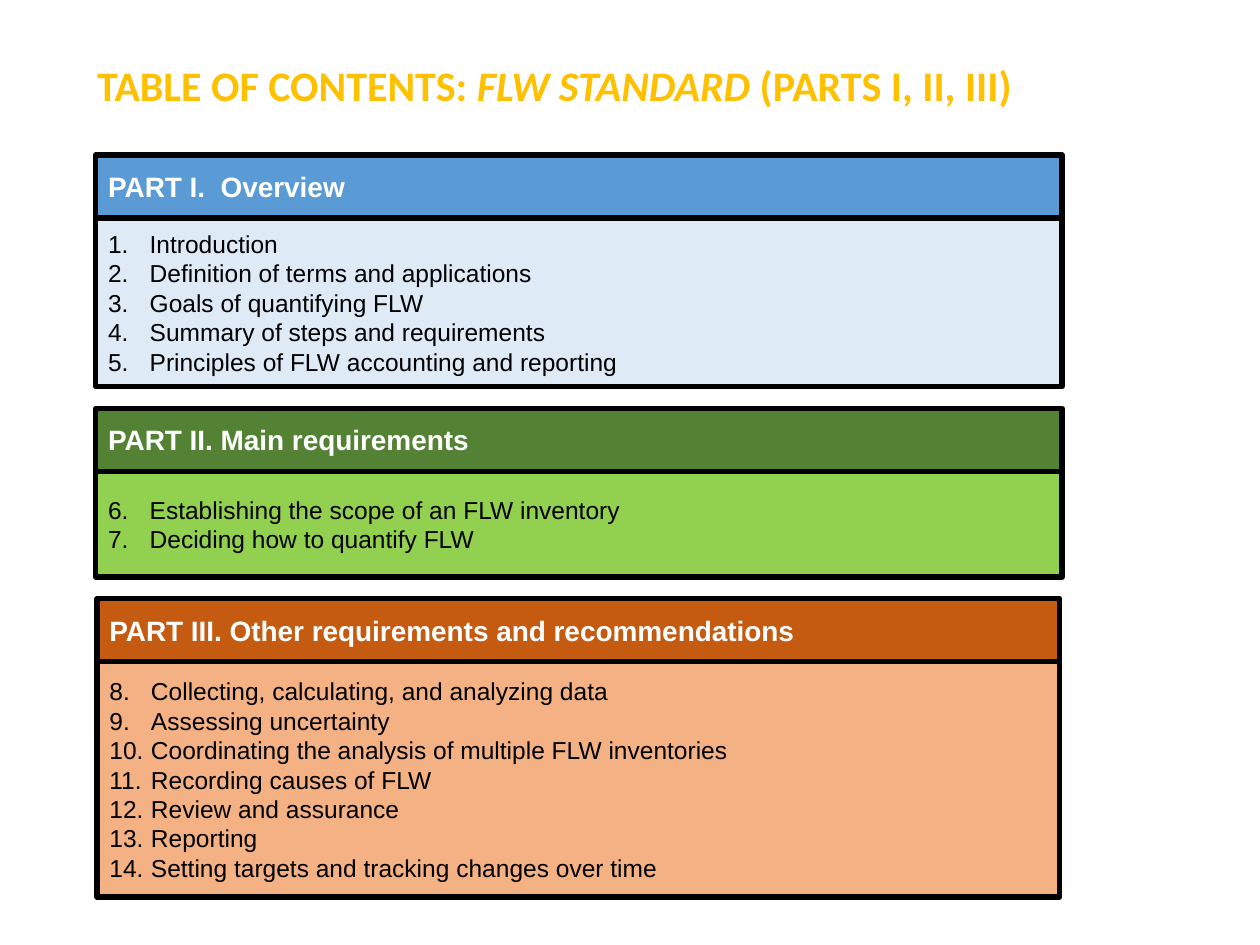
from lxml import etree
from pptx import Presentation
from pptx.dml.color import RGBColor
from pptx.enum import shapes, text
from pptx.oxml import ns
from pptx.util import Inches, Pt

BLACK = RGBColor(0x00, 0x00, 0x00)
WHITE = RGBColor(0xFF, 0xFF, 0xFF)
GOLD = RGBColor(0xFF, 0xC0, 0x00)
BLUE = RGBColor(0x5B, 0x9B, 0xD5)
GREEN = RGBColor(0x54, 0x82, 0x35)
LIME = RGBColor(0x92, 0xD0, 0x50)
RUST = RGBColor(0xC5, 0x5A, 0x11)
PEACH = RGBColor(0xF4, 0xB1, 0x83)

HEAD = 0.5  # height of a part's heading bar
HANG = 0.33  # hanging indent of the chapter numbers

# Box, heading, heading colour, body colour, body opacity, first number, chapters
PARTS = [
    ((0.76, 1.23, 7.67, 1.84), "PART I.  Overview", BLUE, BLUE, 20, 1,
     ["Introduction",
      "Definition of terms and applications",
      "Goals of quantifying FLW",
      "Summary of steps and requirements",
      "Principles of FLW accounting and reporting"]),
    ((0.76, 3.24, 7.67, 1.34), "PART II. Main requirements", GREEN, LIME, 100, 6,
     ["Establishing the scope of an FLW inventory",
      "Deciding how to quantify FLW"]),
    ((0.77, 4.75, 7.64, 2.37), "PART III. Other requirements and recommendations",
     RUST, PEACH, 100, 8,
     ["Collecting, calculating, and analyzing data",
      "Assessing uncertainty",
      "Coordinating the analysis of multiple FLW inventories",
      "Recording causes of FLW",
      "Review and assurance",
      "Reporting",
      "Setting targets and tracking changes over time"]),
]


def write(shape, lines, size, color, font="Arial", bold=False, hang=0, space=1.0):
    """Fill a shape with lines; each line is a list of (words, italic) runs."""
    frame = shape.text_frame
    frame.word_wrap = True
    frame.auto_size = text.MSO_AUTO_SIZE.NONE
    frame.vertical_anchor = text.MSO_ANCHOR.MIDDLE
    for i, line in enumerate(lines):
        para = frame.add_paragraph() if i else frame.paragraphs[0]
        para.alignment = text.PP_ALIGN.LEFT
        para.line_spacing = space
        if hang:
            props = para._p.get_or_add_pPr()
            props.set("marL", str(Inches(hang)))
            props.set("indent", str(-Inches(hang)))
        for words, italic in line:
            run = para.add_run()
            run.text = words
            run.font.name, run.font.size = font, Pt(size)
            run.font.bold, run.font.italic = bold, italic
            run.font.color.rgb = color


def add_box(slide, box, color, solid=100):
    rect = slide.shapes.add_shape(shapes.MSO_SHAPE.RECTANGLE, *map(Inches, box))
    rect.shadow.inherit = False
    rect.fill.solid()
    rect.fill.fore_color.rgb = color
    rect.line.color.rgb = BLACK
    rect.line.width = Pt(3)
    if solid < 100:
        tint = rect._element.spPr.find(ns.qn("a:solidFill"))[0]
        etree.SubElement(tint, ns.qn("a:alpha")).set("val", str(solid * 1000))
    return rect


def add_title(slide, box):
    title = slide.shapes.title
    title.left, title.top, title.width, title.height = map(Inches, box)
    runs = [("TABLE OF CONTENTS: ", False), ("FLW STANDARD", True),
            (" (PARTS I, II, III)", False)]
    write(title, [runs], 24, GOLD, font="Calibri", bold=True, space=0.9)


def add_part(slide, box, name, dark, light, solid, first, items):
    left, top, width, height = box
    # Chapter list
    body = add_box(slide, (left, top + HEAD, width, height - HEAD), light, solid)
    lines = [[(f"{n}.\t{item}", False)] for n, item in enumerate(items, first)]
    write(body, lines, 14, BLACK, hang=HANG)
    # Heading bar
    head = add_box(slide, (left, top, width, HEAD), dark)
    write(head, [[(name, False)]], 16, WHITE, bold=True)


def main():
    deck = Presentation()
    deck.slide_width, deck.slide_height = Inches(10), Inches(7.5)
    slide = deck.slides.add_slide(deck.slide_layouts[5])
    add_title(slide, (0.67, 0.41, 9.25, 0.58))
    for part in PARTS:
        add_part(slide, *part)
    deck.save("out.pptx")


if __name__ == "__main__":
    main()
